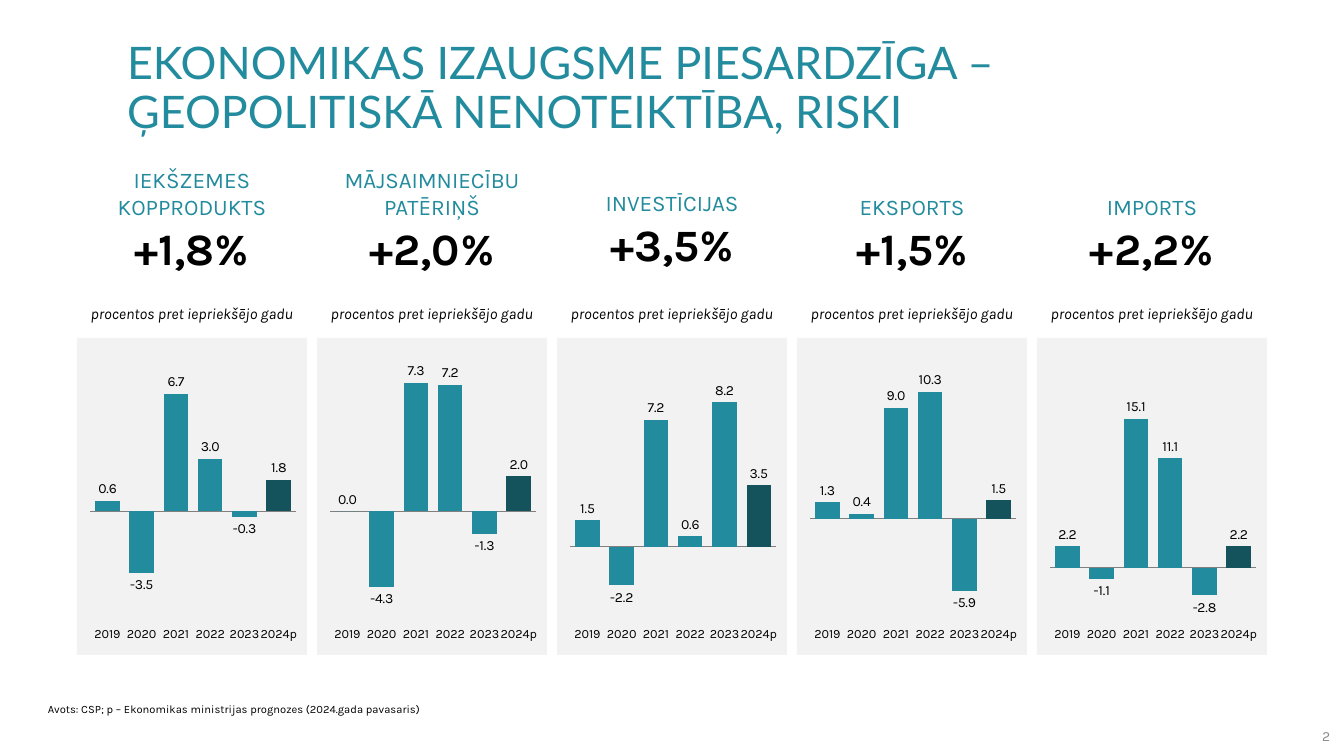
from dataclasses import dataclass

from pptx import Presentation
from pptx import util as u
from pptx.chart import data
from pptx.dml.color import RGBColor
from pptx.enum import chart as ch
from pptx.enum import text
from pptx.oxml import parse_xml
from pptx.oxml.ns import nsdecls


@dataclass(frozen=True)
class Theme:
    teal: str = "228B9D"
    dark_teal: str = "14525C"
    panel: str = "F2F2F2"
    ink: str = "000000"
    grey: str = "8C8C8C"
    axis: str = "808080"
    title_font: str = "Lato"
    body_font: str = "Karla"
    title: int = 32
    figure: int = 32
    heading: int = 16
    unit: int = 11
    label: int = 10
    axis_label: int = 9
    source: int = 8


T = Theme()
EMU_PER_PX = 914400 / 100.8
YEARS = ["2019", "2020", "2021", "2022", "2023", "2024p"]
UNIT = "procentos pret iepriekšējo gadu"

# heading, figure, yearly values, axis range, heading rise in px
INDICATORS = [
    ("IEKŠZEMES KOPPRODUKTS", "+1,8%", [0.6, -3.5, 6.7, 3.0, -0.3, 1.8], (-6, 8), 0),
    ("MĀJSAIMNIECĪBU PATĒRIŅŠ", "+2,0%", [0.0, -4.3, 7.3, 7.2, -1.3, 2.0], (-6, 8), 0),
    ("INVESTĪCIJAS", "+3,5%", [1.5, -2.2, 7.2, 0.6, 8.2, 3.5], (-4, 10), 4),
    ("EKSPORTS", "+1,5%", [1.3, 0.4, 9.0, 10.3, -5.9, 1.5], (-8, 12), 0),
    ("IMPORTS", "+2,2%", [2.2, -1.1, 15.1, 11.1, -2.8, 2.2], (-5, 20), 0),
]


def px(n):
    return u.Emu(round(n * EMU_PER_PX))


def set_all(obj, **values):
    for name, value in values.items():
        setattr(obj, name, value)


def set_font(font, size, color, name=T.body_font, **values):
    set_all(font, size=u.Pt(size), name=name, **values)
    font.color.rgb = RGBColor.from_string(color)


def fill(fmt, color):
    fmt.fill.solid()
    fmt.fill.fore_color.rgb = RGBColor.from_string(color)


def add_text(slide, box, lines, align, anchor=text.MSO_ANCHOR.TOP):
    """Each line is a paragraph: its words and its font values."""
    tf = slide.shapes.add_textbox(*map(px, box)).text_frame
    set_all(tf, word_wrap=True, vertical_anchor=anchor)
    for i, (words, font) in enumerate(lines):
        p = tf.add_paragraph() if i else tf.paragraphs[0]
        p.alignment = align
        r = p.add_run()
        r.text = words
        set_font(r.font, **font)


def add_title(slide, box, words):
    sp = slide.shapes.title
    set_all(sp, **dict(zip(("left", "top", "width", "height"), map(px, box))))
    tf = sp.text_frame
    tf.text = words
    set_all(tf, word_wrap=True, auto_size=text.MSO_AUTO_SIZE.NONE,
            vertical_anchor=text.MSO_ANCHOR.MIDDLE)
    p = tf.paragraphs[0]
    set_all(p, alignment=text.PP_ALIGN.LEFT, line_spacing=0.9)
    for r in p.runs:
        set_font(r.font, T.title, T.teal, T.title_font)


def style_panel(chart):
    """Panel fill and a fixed inner plot area."""
    root = chart.element
    plot_area = root.chart.plotArea
    sp_pr = (f'<c:spPr {nsdecls("c", "a")}><a:solidFill><a:srgbClr val="{T.panel}"/>'
             '</a:solidFill><a:ln><a:noFill/></a:ln></c:spPr>')
    root.chart.addnext(parse_xml(sp_pr))
    plot_area.append(parse_xml(sp_pr))
    for old in plot_area.xpath("c:layout"):
        plot_area.remove(old)
    place = dict(x=0.058, y=0.103, w=0.894, h=0.778)
    modes = '<c:xMode val="edge"/><c:yMode val="edge"/>'
    sizes = "".join(f'<c:{k} val="{v}"/>' for k, v in place.items())
    plot_area.insert(0, parse_xml(
        f'<c:layout {nsdecls("c")}><c:manualLayout><c:layoutTarget val="inner"/>'
        f'{modes}{sizes}</c:manualLayout></c:layout>'))


def add_growth_chart(slide, box, values, limits):
    cd = data.CategoryChartData(number_format="0.0")
    cd.categories = YEARS
    cd.add_series("Series 1", values)
    chart = slide.shapes.add_chart(
        ch.XL_CHART_TYPE.COLUMN_CLUSTERED, *map(px, box), cd).chart
    set_all(chart, has_title=False, has_legend=False)
    set_font(chart.font, T.label, T.ink)

    # Axes
    low, high = limits
    set_all(chart.value_axis, minimum_scale=low, maximum_scale=high,
            has_major_gridlines=False, visible=False)
    years = chart.category_axis
    set_all(years, tick_label_position=ch.XL_TICK_LABEL_POSITION.LOW,
            major_tick_mark=ch.XL_TICK_MARK.NONE, has_major_gridlines=False)
    set_font(years.tick_labels.font, T.axis_label, T.ink)
    years.format.line.color.rgb = RGBColor.from_string(T.axis)
    years.format.line.width = u.Pt(0.75)

    # Columns, with the forecast year darker
    plot = chart.plots[0]
    set_all(plot, gap_width=40, vary_by_categories=False, has_data_labels=True)
    series = plot.series[0]
    series.invert_if_negative = False
    fill(series.format, T.teal)
    fill(series.points[len(YEARS) - 1].format, T.dark_teal)
    set_all(plot.data_labels, show_value=True, number_format="0.0",
            number_format_is_linked=False,
            position=ch.XL_LABEL_POSITION.OUTSIDE_END)
    set_font(plot.data_labels.font, T.label, T.ink)
    style_panel(chart)


def add_indicator(slide, box, heading, figure, values, limits, rise):
    """A column: heading and figure, unit line, chart panel."""
    x, y, w, h = box
    center = text.PP_ALIGN.CENTER
    add_text(slide, (x, y - rise, w, 115),
             [(heading, dict(size=T.heading, color=T.teal)),
              (figure, dict(size=T.figure, color=T.ink, bold=True))],
             center, text.MSO_ANCHOR.BOTTOM)
    add_text(slide, (x, y + 135, w, 28),
             [(UNIT, dict(size=T.unit, color=T.ink, italic=True))], center)
    add_growth_chart(slide, (x, y + 174, w, h - 174), values, limits)


def add_footer(slide, box):
    x, y, w, h = box
    add_text(slide, (x, y, 461, 24),
             [("Avots: CSP; p – Ekonomikas ministrijas prognozes (2024.gada pavasaris)",
               dict(size=T.source, color=T.ink))], text.PP_ALIGN.LEFT)
    add_text(slide, (x + w - 44, y + h - 33, 44, 33),
             [("2", dict(size=T.label, color=T.grey))],
             text.PP_ALIGN.RIGHT, text.MSO_ANCHOR.MIDDLE)


def main():
    prs = Presentation()
    set_all(prs, slide_width=px(1344), slide_height=px(756))
    slide = prs.slides.add_slide(prs.slide_layouts[5])
    add_title(slide, (117, 38, 1180, 103),
              "EKONOMIKAS IZAUGSME PIESARDZĪGA –\vĢEOPOLITISKĀ NENOTEIKTĪBA, RISKI")
    for i, indicator in enumerate(INDICATORS):
        add_indicator(slide, (77 + 240 * i, 164, 230, 491), *indicator)
    add_footer(slide, (38, 697, 1302, 55))
    prs.save("out.pptx")


if __name__ == "__main__":
    main()
